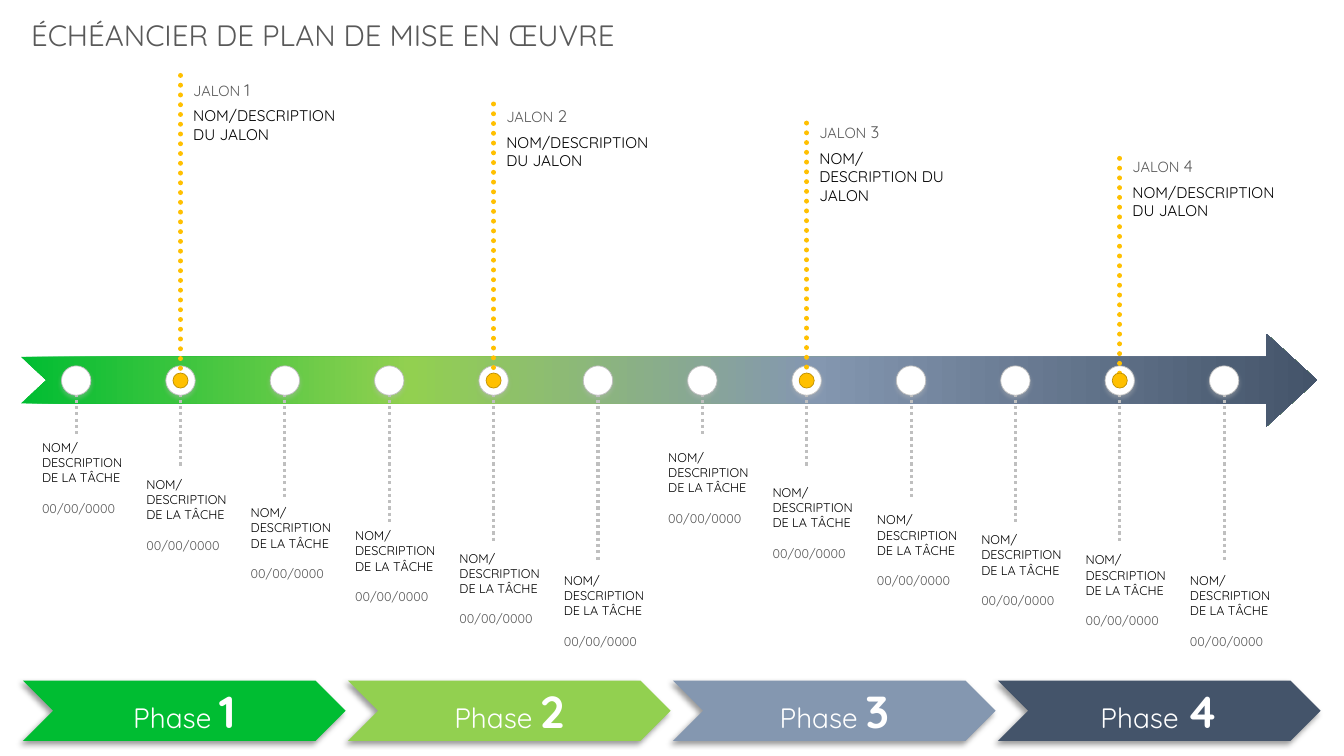
"""Build a timeline slide with phases, tasks and milestones."""
from pptx import Presentation
from pptx.dml.color import RGBColor
from pptx.enum.dml import MSO_LINE
from pptx.enum.shapes import MSO_CONNECTOR, MSO_SHAPE
from pptx.enum.text import MSO_ANCHOR, MSO_AUTO_SIZE, PP_ALIGN
from pptx.oxml import parse_xml
from pptx.oxml.ns import nsdecls, qn
from pptx.util import Cm, Pt

TITLE = "ÉCHÉANCIER DE PLAN DE MISE EN ŒUVRE"
TASK = "NOM/\vDESCRIPTION DE LA TÂCHE"
DATE = "00/00/0000"
GOAL = "NOM/DESCRIPTION DU JALON"
PHASES = ["00BD32", "92D050", "8497B0", "44546A"]
STOPS = [0, 30, 61, 100]
STEMS = [11, 11.76, 12.52, 13.16, 13.67, 14.17] * 2
TOPS = [10.95, 11.89, 12.6, 13.18, 13.74, 14.3,
        11.2, 12.09, 12.78, 13.28, 13.79, 14.3]
GOALS = [
    {"stem": 1.9, "top": 1.88, "width": 4.34, "height": 6.35},
    {"stem": 2.62, "top": 2.54, "width": 4.39, "height": 6.2},
    {"stem": 3.1, "top": 2.95, "width": 3.99, "height": 5.2},
    {"stem": 3.99, "top": 3.81, "width": 4.19, "height": 4.4},
]
FONT = "Quicksand"
BLACK, GREY, PALE, WHITE = "000000", "595959", "BFBFBF", "FFFFFF"
GOLD, BROWN = "FFC000", "BF9000"
FIRST, STEP, AXIS = 1.92, 2.63, 9.59


def color(code):
    return RGBColor.from_string(code)


def style(run, size, code, bold=False):
    font = run.font
    font.name, font.size, font.bold = FONT, Pt(size), bold
    font.color.rgb = color(code)


def add_runs(para, parts, code):
    for text, size, bold in parts:
        run = para.add_run()
        run.text = text
        style(run, size, code, bold)


def add_shape(kind, left, top, width, height, fill=None, edge=None):
    shape = slide.shapes.add_shape(kind, Cm(left), Cm(top), Cm(width), Cm(height))
    shape.shadow.inherit = False
    if fill:
        shape.fill.solid()
        shape.fill.fore_color.rgb = color(fill)
    if edge:
        shape.line.color.rgb = color(edge)
        shape.line.width = Pt(0.5)
    else:
        shape.line.fill.background()
    return shape


def add_disc(x, size, fill, edge):
    return add_shape(MSO_SHAPE.OVAL, x - size / 2, AXIS - size / 2, size, size, fill, edge)


def add_shadow(shape, code, alpha, blur, dist, angle):
    shape.element.spPr.find(qn("a:effectLst")).append(parse_xml(
        f'<a:outerShdw {nsdecls("a")} blurRad="{Pt(blur)}" dist="{Pt(dist)}" '
        f'dir="{angle * 60000}" algn="t" rotWithShape="0"><a:srgbClr val="{code}">'
        f'<a:alpha val="{alpha * 1000}"/></a:srgbClr></a:outerShdw>'))


def add_stem(x, start, end, code, width, cap):
    stem = slide.shapes.add_connector(
        MSO_CONNECTOR.STRAIGHT, Cm(x), Cm(start), Cm(x), Cm(end))
    stem.line.color.rgb = color(code)
    stem.line.width = Pt(width)
    stem.line.dash_style = MSO_LINE.ROUND_DOT
    props = stem.element.spPr
    props.find(qn("a:ln")).set("cap", cap)
    props.append(parse_xml(f'<a:effectLst {nsdecls("a")}/>'))


def add_text(left, top, width, height):
    box = slide.shapes.add_textbox(Cm(left), Cm(top), Cm(width), Cm(height))
    box.text_frame.word_wrap = True
    return box.text_frame


def add_title():
    title = slide.shapes.title
    title.left, title.top, title.width, title.height = Cm(0.53), Cm(0.3), Cm(23.37), Cm(1.14)
    frame = title.text_frame
    frame.text = TITLE
    frame.auto_size = MSO_AUTO_SIZE.NONE
    frame.vertical_anchor = MSO_ANCHOR.MIDDLE
    para = frame.paragraphs[0]
    para.alignment = PP_ALIGN.LEFT
    para.line_spacing = 1.0
    style(para.runs[0], 21, GREY)


def add_phase(index, fill):
    shape = add_shape(MSO_SHAPE.CHEVRON, 0.58 + 8.19 * index, 17.15, 8.13, 1.52, fill)
    add_shadow(shape, BLACK, 40, 4, 3, 135)
    shape.text_frame.vertical_anchor = MSO_ANCHOR.MIDDLE
    para = shape.text_frame.paragraphs[0]
    para.alignment = PP_ALIGN.CENTER
    add_runs(para, [("Phase ", 20, False), (str(index + 1), 32, True)], WHITE)


def add_arrow():
    arrow = add_shape(MSO_SHAPE.NOTCHED_RIGHT_ARROW, 0.53, 8.41, 32.66, 2.34)
    arrow.adjustments[1] = 0.545
    arrow.fill.gradient()
    arrow.fill.gradient_angle = 0
    stops = arrow.element.spPr.find(".//" + qn("a:gsLst"))
    stops.clear()
    for spot, code in zip(STOPS, PHASES):
        stops.append(parse_xml(
            f'<a:gs {nsdecls("a")} pos="{spot * 1000}"><a:srgbClr val="{code}"/></a:gs>'))


def add_task(x, top):
    frame = add_text(x - 0.86, top, 2.46, 2.29)
    frame.margin_left = frame.margin_right = 0
    frame.margin_top, frame.margin_bottom = Cm(0.13), Cm(0.03)
    task, date = frame.paragraphs[0], frame.add_paragraph()
    task.text, date.text = TASK, DATE
    date.space_before = Pt(11)
    for para, code in ((task, BLACK), (date, GREY)):
        for run in para.runs:
            style(run, 9, code)


def add_goal(number, x, stem, top, width, height):
    add_stem(x, stem, 9.56, GOLD, 3.5, "rnd")
    add_disc(x, 0.38, GOLD, BROWN)
    label = add_text(x + 0.07, top, 2.97, 0.66)
    add_runs(label.paragraphs[0],
             [("JALON", 10.5, False), (" ", 11, False), (str(number), 12, False)], GREY)
    frame = add_text(x + 0.07, top + 0.68, width, height)
    frame.text = GOAL
    style(frame.paragraphs[0].runs[0], 11, BLACK)


deck = Presentation()
deck.slide_width, deck.slide_height = Cm(33.87), Cm(19.05)
slide = deck.slides.add_slide(deck.slide_layouts[5])
spots = [FIRST + STEP * index for index in range(len(TOPS))]

add_title()
for index, fill in enumerate(PHASES):
    add_phase(index, fill)
add_arrow()
for x, end in zip(spots, STEMS):
    add_stem(x, 9.6, end, PALE, 2.25, "flat")
for x, top in zip(spots, TOPS):
    add_shadow(add_disc(x, 0.74, WHITE, PALE), PALE, 35, 3.1, 1.8, 90)
    add_task(x, top)
for number, (x, goal) in enumerate(zip(spots[1::3], GOALS), 1):
    add_goal(number, x, **goal)

deck.save("out.pptx")
